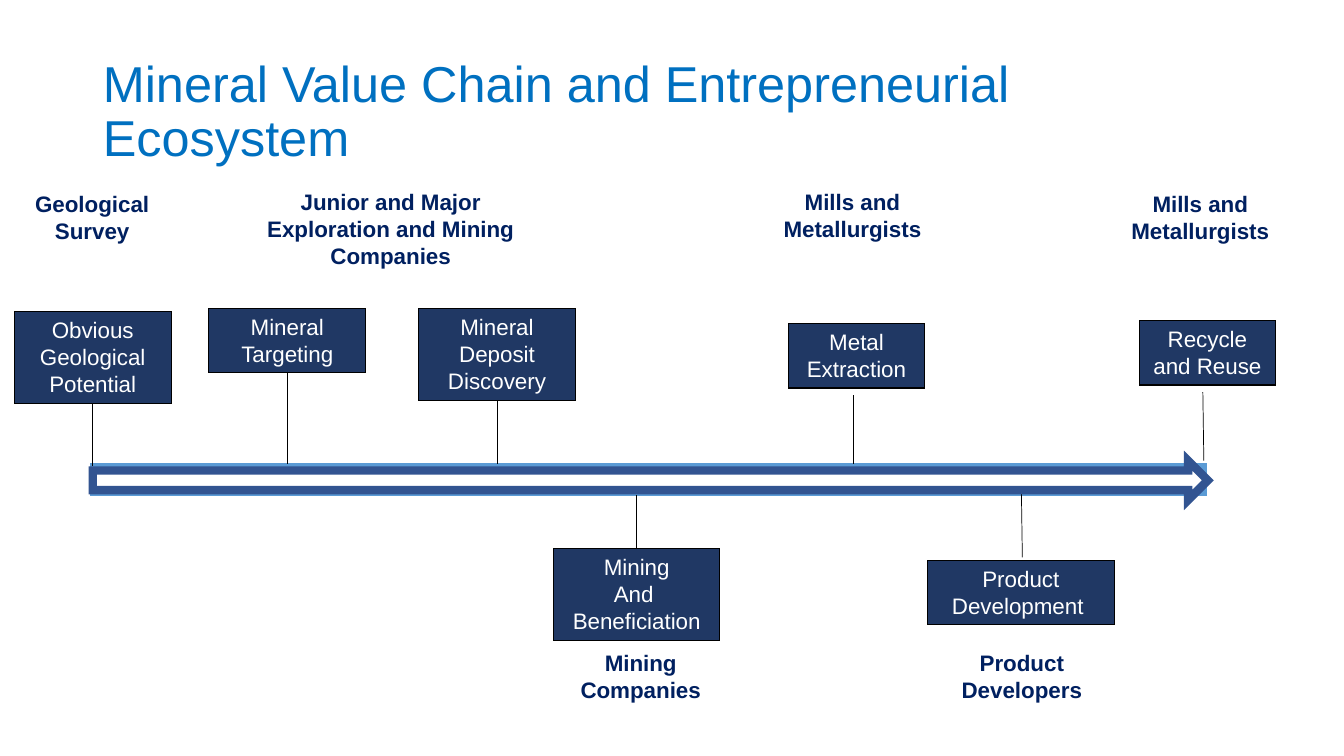
"""Build the mineral value chain timeline slide."""
from dataclasses import dataclass

from pptx import Presentation
from pptx import util as u
from pptx.dml.color import RGBColor
from pptx.enum import shapes, text
from pptx.oxml import parse_xml
from pptx.oxml.ns import nsdecls

PX = u.Inches(1) // 100
FONT = "Arial"
COLORS = {
    "title": "0070C0",
    "caption": "002060",
    "stage": "203864",
    "track": "5B9BD5",
    "arrow": "325491",
    "white": "FFFFFF",
    "black": "000000",
}
TOP, BOTTOM = 0, 2


@dataclass(frozen=True)
class Box:
    label: str
    left: int
    top: int
    width: int
    height: int

    def emu(self) -> list[int]:
        return [n * PX for n in (self.left, self.top, self.width, self.height)]


@dataclass(frozen=True)
class Stage:
    box: Box
    line: tuple[int, int, int, int]
    side: int | None = None


STAGES = [
    Stage(Box("Obvious Geological Potential", 14, 309, 156, 91), (92, 400, 92, 462), BOTTOM),
    Stage(Box("Mineral Deposit Discovery", 415, 306, 156, 91), (493, 397, 493, 460), BOTTOM),
    Stage(Box("Mining\nAnd \nBeneficiation", 549, 544, 165, 91), (632, 544, 632, 491), TOP),
    Stage(Box("Metal Extraction", 782, 321, 135, 64), (846, 392, 846, 460)),
    Stage(Box("Product Development ", 920, 556, 185, 64), (1013, 485, 1014, 553)),
    Stage(Box("Recycle and Reuse", 1130, 318, 135, 64), (1193, 389, 1194, 457)),
    Stage(Box("Mineral Targeting", 207, 306, 156, 64), (285, 370, 285, 460), BOTTOM),
]
CAPTIONS = [
    Box("Geological Survey", 5, 184, 173, 64),
    Box("Junior and Major Exploration and Mining Companies", 238, 182, 299, 91),
    Box("Mining Companies", 549, 639, 173, 64),
    Box("Mills and Metallurgists", 759, 182, 173, 64),
    Box("Product Developers", 927, 639, 173, 64),
    Box("Mills and Metallurgists", 1104, 184, 173, 64),
]
TITLE = Box("Mineral Value Chain and Entrepreneurial Ecosystem", 92, 40, 1150, 145)
TRACK = Box("", 92, 462, 1102, 27)
ARROW = Box("", 92, 457, 1106, 39)


def rgb(name: str) -> RGBColor:
    return RGBColor.from_string(COLORS[name])


def write(frame, label: str, size: int, color: str, align, bold: bool = False) -> None:
    frame.text = label
    frame.word_wrap = True
    for paragraph in frame.paragraphs:
        paragraph.alignment = align
        for run in paragraph.runs:
            run.font.name = FONT
            run.font.size = u.Pt(size)
            run.font.bold = bold
            run.font.color.rgb = rgb(color)


def write_label(frame, label: str, color: str, bold: bool = False) -> None:
    write(frame, label, 16, color, text.PP_ALIGN.CENTER, bold)
    frame.vertical_anchor = text.MSO_ANCHOR.TOP
    frame.auto_size = text.MSO_AUTO_SIZE.SHAPE_TO_FIT_TEXT


def add_block(slide, kind, box: Box, fill: str, outline: str, weight: float):
    block = slide.shapes.add_shape(kind, *box.emu())
    block.shadow.inherit = False
    block.fill.solid()
    block.fill.fore_color.rgb = rgb(fill)
    block.line.color.rgb = rgb(outline)
    block.line.width = u.Pt(weight)
    block.line._get_or_add_ln().append(
        parse_xml(f'<a:miter {nsdecls("a")} lim="800000"/>'))
    return block


def add_stage(slide, stage: Stage) -> None:
    block = add_block(slide, shapes.MSO_SHAPE.RECTANGLE, stage.box, "stage", "black", 0.75)
    write_label(block.text_frame, stage.box.label, "white")
    leader = slide.shapes.add_connector(
        shapes.MSO_CONNECTOR.STRAIGHT, *(n * PX for n in stage.line))
    leader.line.color.rgb = rgb("black")
    leader.line.width = u.Pt(0.5)
    leader._element.spPr.append(parse_xml(f'<a:effectLst {nsdecls("a")}/>'))
    if stage.side is not None:
        leader.begin_connect(block, stage.side)
        leader.end_x = leader.begin_x


def add_caption(slide, caption: Box) -> None:
    frame = slide.shapes.add_textbox(*caption.emu()).text_frame
    write_label(frame, caption.label, "caption", bold=True)


def add_title(slide) -> None:
    title = slide.shapes.title
    title.left, title.top, title.width, title.height = TITLE.emu()
    write(title.text_frame, TITLE.label, 36, "title", text.PP_ALIGN.LEFT)
    title.text_frame.vertical_anchor = text.MSO_ANCHOR.MIDDLE
    title.text_frame.auto_size = text.MSO_AUTO_SIZE.NONE
    title.text_frame.paragraphs[0].line_spacing = 0.9


def main() -> None:
    deck = Presentation()
    deck.slide_width, deck.slide_height = 1333 * PX, 750 * PX
    slide = deck.slides.add_slide(deck.slide_layouts.get_by_name("Title Only"))
    add_title(slide)
    add_block(slide, shapes.MSO_SHAPE.RECTANGLE, TRACK, "track", "track", 4.5)
    for stage in STAGES:
        add_stage(slide, stage)
    for caption in CAPTIONS:
        add_caption(slide, caption)
    add_block(slide, shapes.MSO_SHAPE.RIGHT_ARROW, ARROW, "white", "arrow", 6)
    deck.save("out.pptx")


if __name__ == "__main__":
    main()
